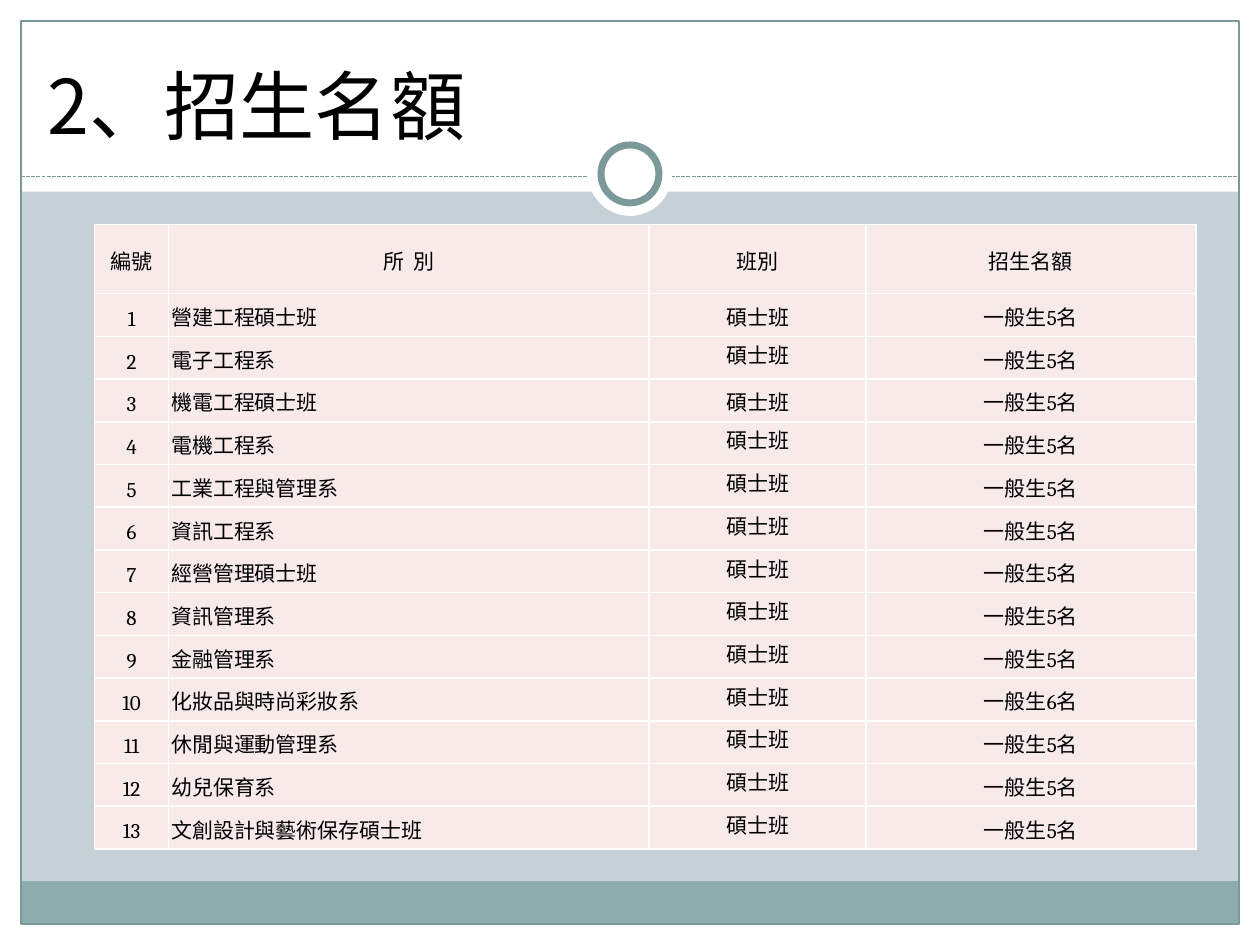
from lxml import etree
from pptx import Presentation
from pptx import util as u
from pptx.dml.color import RGBColor
from pptx.enum import dml, shapes, text
from pptx.oxml import ns

Pt = u.Pt
COLORS = {
    "background": "C5D1D7",
    "white": "FFFFFF",
    "footer": "8CADAE",
    "frame": "7C999A",
    "cell": "F7EAE9",
    "text": "000000",
}
CJK_FONT = "Noto Sans CJK SC"
TABLE_FONT = "Cambria"

TITLE = "2、招生名額"
HEADERS = ("編號", "所  別", "班別", "招生名額")
PROGRAM = "碩士班"
DEPARTMENTS = (
    ("營建工程碩士班", 5),
    ("電子工程系", 5),
    ("機電工程碩士班", 5),
    ("電機工程系", 5),
    ("工業工程與管理系", 5),
    ("資訊工程系", 5),
    ("經營管理碩士班", 5),
    ("資訊管理系", 5),
    ("金融管理系", 5),
    ("化妝品與時尚彩妝系", 6),
    ("休閒與運動管理系", 5),
    ("幼兒保育系", 5),
    ("文創設計與藝術保存碩士班", 5),
)
MIDDLE_PROGRAM_ROWS = (0, 1, 3)

WIDTH, HEIGHT = 720, 540
MARGIN = 12
HEADER_HEIGHT = 109.5
FOOTER_HEIGHT = 24.5
DIVIDER_TOP = 100.8
RING_CENTER = (WIDTH / 2, 99.4)
TITLE_BOX = (20, 28.8, 672, 60)
TABLE_LEFT, TABLE_TOP = 54, 128.2
COLUMN_WIDTHS = (42.4, 274.6, 123.9, 188.5)
HEADER_ROW, BODY_ROW = 39.6, 24.42


def color(name):
    return RGBColor.from_string(COLORS[name])


def write_text(frame, content, size, font, align, line_spacing=None):
    paragraph = frame.paragraphs[0]
    paragraph.alignment = align
    if line_spacing:
        paragraph.line_spacing = Pt(line_spacing)
    run = paragraph.add_run()
    run.text = content
    run.font.size = Pt(size)
    run.font.name = font
    run.font.color.rgb = color("text")
    east_asian = etree.SubElement(run.font._element, ns.qn("a:ea"))
    east_asian.set("typeface", CJK_FONT)


def add_panel(slide, kind, box, fill=None, line=None, line_width=0.75):
    shape = slide.shapes.add_shape(kind, *map(Pt, box))
    shape.shadow.inherit = False
    if fill:
        shape.fill.solid()
        shape.fill.fore_color.rgb = color(fill)
    else:
        shape.fill.background()
    if line:
        shape.line.color.rgb = color(line)
        shape.line.width = Pt(line_width)
    else:
        shape.line.fill.background()


def add_circle(slide, diameter, **style):
    x, y = RING_CENTER
    box = (x - diameter / 2, y - diameter / 2, diameter, diameter)
    add_panel(slide, shapes.MSO_SHAPE.OVAL, box, fill="white", **style)


def add_decoration(slide):
    rectangle = shapes.MSO_SHAPE.RECTANGLE
    inner_width = WIDTH - 2 * MARGIN
    bottom = HEIGHT - MARGIN
    for box in (
        (0, bottom, WIDTH, MARGIN),
        (0, 0, WIDTH, HEADER_HEIGHT),
        (0, 0, MARGIN, HEIGHT),
        (WIDTH - MARGIN, 0, MARGIN, HEIGHT),
    ):
        add_panel(slide, rectangle, box, fill="white")
    footer = (MARGIN, bottom - FOOTER_HEIGHT, inner_width, FOOTER_HEIGHT)
    add_panel(slide, rectangle, footer, fill="footer")
    frame = (MARGIN, MARGIN, inner_width, HEIGHT - 2 * MARGIN)
    add_panel(slide, rectangle, frame, line="frame")

    divider = slide.shapes.add_connector(
        shapes.MSO_CONNECTOR.STRAIGHT,
        Pt(MARGIN), Pt(DIVIDER_TOP), Pt(WIDTH - MARGIN), Pt(DIVIDER_TOP),
    )
    divider.line.color.rgb = color("frame")
    divider.line.width = Pt(0.75)
    divider.line.dash_style = dml.MSO_LINE.SQUARE_DOT
    etree.SubElement(divider._element.spPr, ns.qn("a:effectLst"))

    add_circle(slide, 48)
    add_circle(slide, 33.1, line="frame", line_width=4)


def add_title(slide):
    title = slide.shapes.title
    title.left, title.top, title.width, title.height = map(Pt, TITLE_BOX)
    frame = title.text_frame
    frame.word_wrap = True
    frame.auto_size = text.MSO_AUTO_SIZE.NONE
    frame.vertical_anchor = text.MSO_ANCHOR.BOTTOM
    write_text(frame, TITLE, size=43, font=CJK_FONT, align=text.PP_ALIGN.LEFT)
    slide.shapes._spTree.append(title._element)


def format_cell(cell, content, align, anchor):
    cell.margin_left = cell.margin_right = Pt(1.4)
    cell.margin_top = cell.margin_bottom = 0
    cell.vertical_anchor = anchor
    write_text(cell.text_frame, content, size=12, font=TABLE_FONT,
               align=align, line_spacing=19)
    properties = cell._tc.get_or_add_tcPr()
    for side in ("lnL", "lnR", "lnT", "lnB"):
        border = etree.SubElement(properties, ns.qn("a:" + side), w=str(Pt(1)))
        fill = etree.SubElement(border, ns.qn("a:solidFill"))
        etree.SubElement(fill, ns.qn("a:srgbClr"), val=COLORS["white"])
    cell.fill.solid()
    cell.fill.fore_color.rgb = color("cell")


def add_quota_table(slide):
    rows = [HEADERS] + [
        (str(number), name, PROGRAM, f"一般生{quota}名")
        for number, (name, quota) in enumerate(DEPARTMENTS, 1)
    ]
    heights = [HEADER_ROW] + [BODY_ROW] * len(DEPARTMENTS)
    table = slide.shapes.add_table(
        len(rows), len(HEADERS), Pt(TABLE_LEFT), Pt(TABLE_TOP),
        Pt(sum(COLUMN_WIDTHS)), Pt(sum(heights)),
    ).table
    table.first_row = table.horz_banding = False
    for column, width in zip(table.columns, COLUMN_WIDTHS):
        column.width = Pt(width)
    for row_index, (values, height) in enumerate(zip(rows, heights)):
        table.rows[row_index].height = Pt(height)
        for column_index, value in enumerate(values):
            is_name = column_index == 1 and row_index > 0
            is_top = column_index == 2 and row_index not in MIDDLE_PROGRAM_ROWS
            format_cell(
                table.cell(row_index, column_index), value,
                align=text.PP_ALIGN.LEFT if is_name else text.PP_ALIGN.CENTER,
                anchor=text.MSO_ANCHOR.TOP if is_top else text.MSO_ANCHOR.MIDDLE,
            )


def main():
    presentation = Presentation()
    presentation.slide_width, presentation.slide_height = Pt(WIDTH), Pt(HEIGHT)
    slide = presentation.slides.add_slide(presentation.slide_layouts[5])
    slide.background.fill.solid()
    slide.background.fill.fore_color.rgb = color("background")
    add_decoration(slide)
    add_title(slide)
    add_quota_table(slide)
    presentation.save("out.pptx")


if __name__ == "__main__":
    main()
